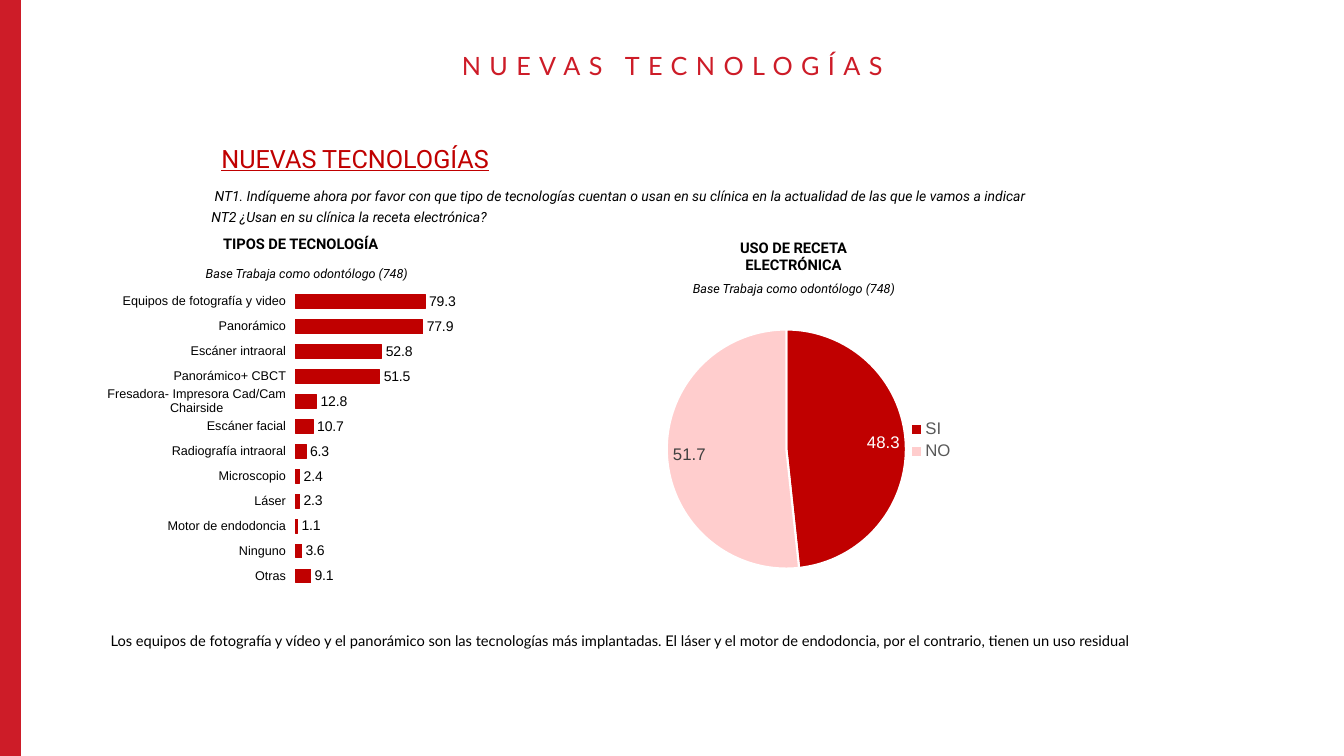
from lxml import etree
from pptx import Presentation
from pptx.chart.data import CategoryChartData
from pptx.dml.color import RGBColor
from pptx.enum.chart import XL_CHART_TYPE, XL_LABEL_POSITION, XL_LEGEND_POSITION, XL_TICK_MARK
from pptx.enum.shapes import MSO_SHAPE
from pptx.enum.text import MSO_ANCHOR, PP_ALIGN
from pptx.oxml.ns import qn
from pptx.util import Cm, Pt

BARS, PIE = XL_CHART_TYPE.BAR_CLUSTERED, XL_CHART_TYPE.PIE
OUTSIDE_END, INSIDE_END = XL_LABEL_POSITION.OUTSIDE_END, XL_LABEL_POSITION.INSIDE_END
LEGEND_RIGHT = XL_LEGEND_POSITION.RIGHT
TICK_OUTSIDE, TICK_NONE = XL_TICK_MARK.OUTSIDE, XL_TICK_MARK.NONE
RECTANGLE = MSO_SHAPE.RECTANGLE
TOP, MIDDLE = MSO_ANCHOR.TOP, MSO_ANCHOR.MIDDLE
LEFT, CENTER = PP_ALIGN.LEFT, PP_ALIGN.CENTER

THEME = {
    "band": "CD1C28", "red": "C00000", "pink": "FFCDCD", "white": "FFFFFF",
    "text": "000000", "gray": "595959", "dark": "404040",
    "heading": 18, "caption": 10.5, "question": 10, "base": 9,
    "category": 9, "bar_label": 10, "pie_label": 12,
    "title_font": "Lato", "body_font": "Roboto", "chart_font": "Arial",
}

SLIDE_SIZE = (33.87, 19.05)
BAND_WIDTH = 0.53
BASE = "Base Trabaja como odontólogo (748)"

TITLE_FORMAT = dict(font="title_font", color="band", size="heading", align=CENTER,
                    anchor=MIDDLE, line_spacing=0.9, tracking=6)
HEADING_FORMAT = dict(size="heading", color="red", underline=True)
QUESTION_FORMAT = dict(size="question", italic=True)
CAPTION_FORMAT = dict(size="caption", bold=True, align=CENTER)
BASE_FORMAT = dict(size="base", italic=True, align=CENTER)
CONCLUSION_FORMAT = dict(font="title_font", size="caption", line_spacing=0.9)

# text, (left, top, width, height) in cm, format
TEXTS = [
    ("NUEVAS TECNOLOGÍAS", (9.78, 1.22, 14.33, 0.94), TITLE_FORMAT),
    ("NUEVAS TECNOLOGÍAS", (5.33, 3.48, 21.44, 1.02), HEADING_FORMAT),
    ("NT1. Indíqueme ahora por favor con que tipo de tecnologías cuentan o usan "
     "en su clínica en la actualidad de las que le vamos a indicar",
     (5.16, 4.6, 23.57, 0.69), QUESTION_FORMAT),
    ("NT2 ¿Usan en su clínica la receta electrónica?",
     (5.08, 5.13, 21.03, 0.69), QUESTION_FORMAT),
    ("TIPOS DE TECNOLOGÍA", (4.29, 5.79, 6.58, 0.71), CAPTION_FORMAT),
    (BASE, (4.62, 6.58, 6.22, 0.64), BASE_FORMAT),
    ("USO DE RECETA ELECTRÓNICA", (17.37, 5.89, 5.26, 1.14), CAPTION_FORMAT),
    (BASE, (16.54, 6.96, 6.93, 0.64), BASE_FORMAT),
    ("Los equipos de fotografía y vídeo y el panorámico son las tecnologías más "
     "implantadas. El láser y el motor de endodoncia, por el contrario, tienen un uso residual",
     (2.54, 15.85, 29.21, 0.86), CONCLUSION_FORMAT),
]

TECHNOLOGIES = {
    "Equipos de fotografía y video": 79.3,
    "Panorámico": 77.9,
    "Escáner intraoral": 52.8,
    "Panorámico+ CBCT": 51.5,
    "Fresadora- Impresora Cad/Cam Chairside": 12.8,
    "Escáner facial": 10.7,
    "Radiografía intraoral": 6.3,
    "Microscopio": 2.4,
    "Láser": 2.3,
    "Motor de endodoncia": 1.1,
    "Ninguno": 3.6,
    "Otras": 9.1,
}
PRESCRIPTION_USE = {"SI": 48.3, "NO": 51.7}

TECHNOLOGY_BOX = (2.64, 6.96, 9.83, 8.2)
PRESCRIPTION_BOX = (14.48, 8, 10.57, 7.54)
# x, y, width, height as shares of the chart box
BARS_AREA = (0.49, 0.04, 0.46, 0.92)
PIE_AREA = (0.22, 0.04, 0.57, 0.8)
LEGEND_AREA = (0.78, 0.33, 0.14, 0.16)


def rgb(key):
    return RGBColor.from_string(THEME[key])


def paint(fill, key):
    fill.solid()
    fill.fore_color.rgb = rgb(key)


def style_font(font, size, color="text", name="chart_font"):
    font.size, font.name = Pt(THEME[size]), THEME[name]
    font.color.rgb = rgb(color)


def add_text(slide, text, box, font="body_font", size="base", color="text", bold=False,
             italic=False, underline=False, align=LEFT, anchor=TOP, line_spacing=None,
             tracking=None):
    frame = slide.shapes.add_textbox(*map(Cm, box)).text_frame
    frame.word_wrap = True
    frame.vertical_anchor = anchor
    paragraph = frame.paragraphs[0]
    paragraph.alignment, paragraph.line_spacing = align, line_spacing
    run = paragraph.add_run()
    run.text = text
    style_font(run.font, size, color, font)
    run.font.bold, run.font.italic, run.font.underline = bold, italic, underline
    if tracking:
        run.font._element.set("spc", str(tracking * 100))


def place_part(part, area, index, inner=False):
    """Fix the place of a plot area or legend within its chart."""
    for old in part.findall(qn("c:layout")):
        part.remove(old)
    layout = etree.Element(qn("c:layout"))
    manual = etree.SubElement(layout, qn("c:manualLayout"))
    settings = [("layoutTarget", "inner")] if inner else []
    settings += [("xMode", "edge"), ("yMode", "edge"), *zip("xywh", area)]
    for tag, value in settings:
        etree.SubElement(manual, qn("c:" + tag)).set("val", str(value))
    part.insert(index, layout)


def add_chart(slide, kind, shares, box, area):
    data = CategoryChartData()
    data.categories = list(shares)
    data.add_series("Series 1", list(shares.values()))
    chart = slide.shapes.add_chart(kind, *map(Cm, box), data).chart
    chart.has_title = chart.has_legend = False
    style_font(chart.font, "caption")
    place_part(chart._chartSpace.chart.plotArea, area, 0, inner=True)
    return chart


def add_labels(plot, position, size, color="text"):
    plot.has_data_labels = True
    labels = plot.data_labels
    labels.show_value, labels.show_percentage = True, False
    labels.number_format, labels.number_format_is_linked = "#,##0.0", False
    labels.position = position
    style_font(labels.font, size, color)


def add_technology_chart(slide):
    chart = add_chart(slide, BARS, TECHNOLOGIES, TECHNOLOGY_BOX, BARS_AREA)
    names, scale = chart.category_axis, chart.value_axis
    names.reverse_order = True
    names.major_tick_mark, names.minor_tick_mark = TICK_OUTSIDE, TICK_NONE
    names.format.line.fill.background()
    style_font(names.tick_labels.font, "category")
    scale.minimum_scale, scale.maximum_scale, scale.major_unit = 0, 110, 10
    scale.has_major_gridlines = scale.visible = False

    plot = chart.plots[0]
    plot.gap_width, plot.vary_by_categories = 80, False
    bars = plot.series[0].format
    paint(bars.fill, "red")
    paint(bars.line.fill, "red")
    bars.line.width = Pt(0.75)
    add_labels(plot, OUTSIDE_END, "bar_label")


def add_prescription_chart(slide):
    chart = add_chart(slide, PIE, PRESCRIPTION_USE, PRESCRIPTION_BOX, PIE_AREA)
    chart.has_legend = True
    legend = chart.legend
    legend.position, legend.include_in_layout = LEGEND_RIGHT, False
    style_font(legend.font, "pie_label", "gray")
    place_part(legend._element, LEGEND_AREA, 1)

    plot = chart.plots[0]
    plot.vary_by_categories = True
    add_labels(plot, INSIDE_END, "pie_label", "dark")
    points = plot.series[0].points
    for index, (color, label_color) in enumerate([("red", "white"), ("pink", "dark")]):
        slice_format = points[index].format
        paint(slice_format.fill, color)
        paint(slice_format.line.fill, "white")
        slice_format.line.width = Pt(1.5)
        label = points[index].data_label
        style_font(label.font, "pie_label", label_color)
        label.position = INSIDE_END


def main():
    deck = Presentation()
    deck.slide_width, deck.slide_height = map(Cm, SLIDE_SIZE)
    slide = deck.slides.add_slide(deck.slide_layouts[6])
    band = slide.shapes.add_shape(RECTANGLE, 0, 0, Cm(BAND_WIDTH), deck.slide_height)
    band.shadow.inherit = False
    paint(band.fill, "band")
    band.line.fill.background()
    add_technology_chart(slide)
    add_prescription_chart(slide)
    for text, box, text_format in TEXTS:
        add_text(slide, text, box, **text_format)
    deck.save("out.pptx")


if __name__ == "__main__":
    main()
